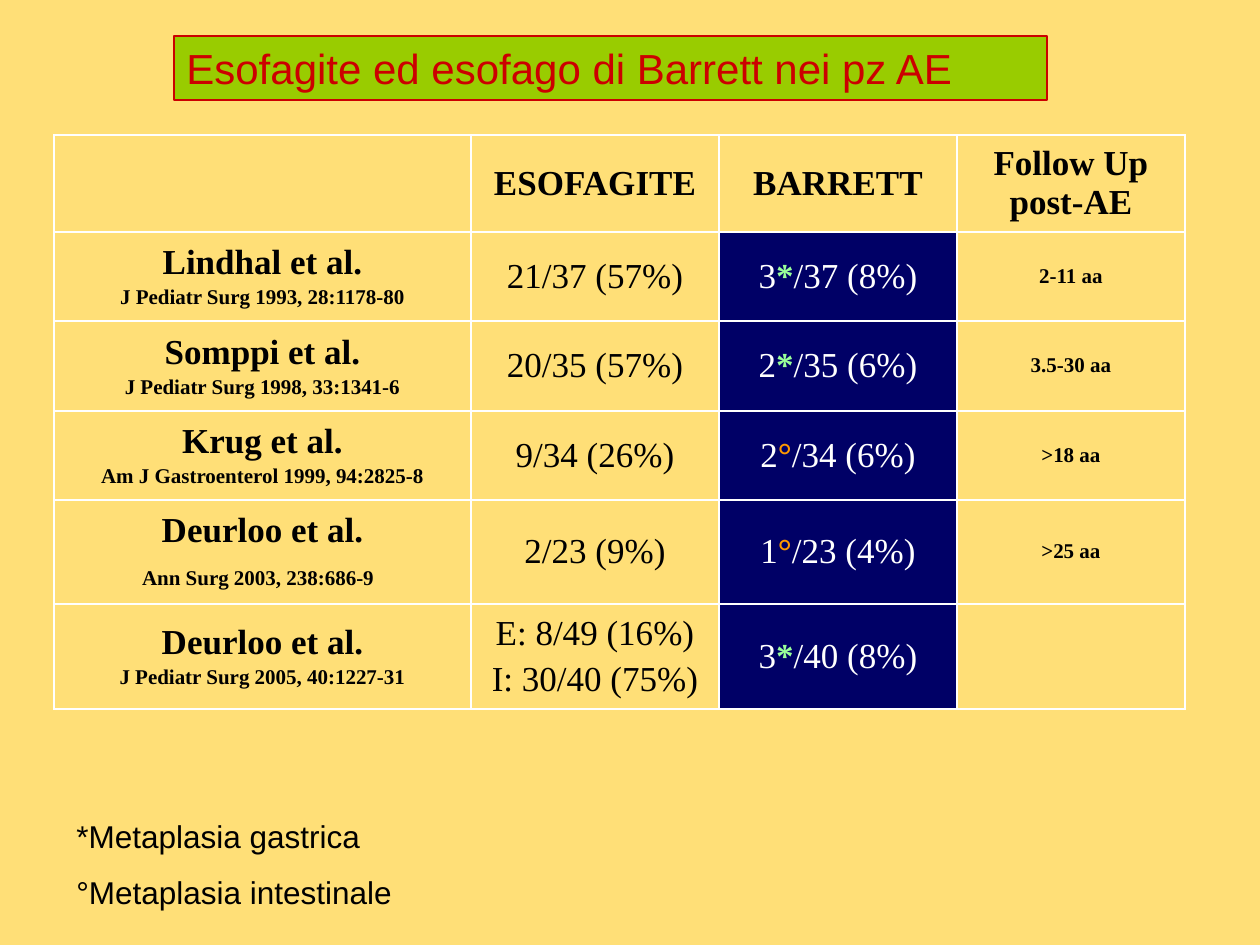
from lxml import etree
from pptx import Presentation, util as u
from pptx.dml.color import RGBColor
from pptx.enum import shapes, text
from pptx.oxml import ns

PX = 914400 / 126
COLORS = {
    "background": "FFDF77",
    "banner": "99CC00",
    "red": "CC0000",
    "black": "000000",
    "white": "FFFFFF",
    "navy": "000066",
    "*": "99FF99",
    "°": "FF9900",
}
STYLES = {
    "title": ({"size": u.Pt(24), "name": "Arial"}, "red"),
    "note": ({"size": u.Pt(18), "name": "Arial"}, "black"),
    "heading": ({"size": u.Pt(20), "name": "Times New Roman", "bold": True}, "black"),
    "small": ({"size": u.Pt(12), "name": "Times New Roman", "bold": True}, "black"),
    "value": ({"size": u.Pt(20), "name": "Times New Roman", "bold": False}, "black"),
    "barrett": ({"size": u.Pt(20), "name": "Times New Roman", "bold": False}, "white"),
    "*": ({"size": u.Pt(20), "name": "Times New Roman", "bold": True}, "*"),
    "°": ({"size": u.Pt(20), "name": "Times New Roman", "bold": True}, "°"),
}
HEADERS = ["", "ESOFAGITE", "BARRETT", "Follow Up post-AE"]
STUDIES = [
    ("Lindhal et al.", "J Pediatr Surg 1993, 28:1178-80", ["21/37 (57%)"], "3*/37 (8%)", "2-11 aa"),
    ("Somppi et al.", "J Pediatr Surg 1998, 33:1341-6", ["20/35 (57%)"], "2*/35 (6%)", "3.5-30 aa"),
    ("Krug et al.", "Am J Gastroenterol 1999, 94:2825-8", ["9/34 (26%)"], "2°/34 (6%)", ">18 aa"),
    ("Deurloo et al.", "Ann Surg 2003, 238:686-9 ", ["2/23 (9%)"], "1°/23 (4%)", ">25 aa"),
    ("Deurloo et al.", "J Pediatr Surg 2005, 40:1227-31", ["E: 8/49 (16%)", "I: 30/40 (75%)"], "3*/40 (8%)", ""),
]
COLUMN_WIDTHS = [417, 248, 238, 228]
ROW_HEIGHTS = [97, 89, 90, 89, 104, 105]


def px(length):
    """Turn a length in px into EMU."""
    return u.Emu(round(length * PX))


def color(name):
    """Look up a named colour."""
    return RGBColor.from_string(COLORS[name])


def apply(target, values):
    """Set attributes from a dict of format values."""
    for name, value in values.items():
        setattr(target, name, value)


def write(frame, paragraphs, gap, alignment):
    """Fill a text frame with paragraphs of (text, style) runs."""
    for index, runs in enumerate(paragraphs):
        paragraph = frame.add_paragraph() if index else frame.paragraphs[0]
        paragraph.alignment = alignment
        if index:
            paragraph.space_before = u.Pt(round(STYLES[runs[0][1]][0]["size"].pt * gap))
        for content, style in runs:
            run = paragraph.add_run()
            run.text = content
            values, tone = STYLES[style]
            apply(run.font, values)
            run.font.color.rgb = color(tone)


def add_title(slide, left, top, width, height):
    """Place the title banner in its box."""
    shape = slide.shapes.add_shape(
        shapes.MSO_SHAPE.RECTANGLE, px(left), px(top), px(width), px(height))
    shape.shadow.inherit = False
    shape.fill.solid()
    shape.fill.fore_color.rgb = color("banner")
    shape.line.color.rgb = color("red")
    shape.line.width = u.Pt(0.75)
    apply(shape.text_frame, {"word_wrap": True, "vertical_anchor": text.MSO_ANCHOR.MIDDLE})
    write(shape.text_frame, [[("Esofagite ed esofago di Barrett nei pz AE", "title")]],
          0.5, text.PP_ALIGN.LEFT)


def add_borders(cell):
    """Draw a thin white line on each side of a cell."""
    properties = cell._tc.get_or_add_tcPr()
    for index, side in enumerate(("lnL", "lnR", "lnT", "lnB")):
        line = etree.Element(ns.qn(f"a:{side}"), w=str(u.Pt(1)))
        fill = etree.SubElement(line, ns.qn("a:solidFill"))
        etree.SubElement(fill, ns.qn("a:srgbClr"), val=COLORS["white"])
        properties.insert(index, line)


def study_cells(author, journal, esophagitis, barrett, follow_up):
    """Turn one study into the paragraphs of its four cells."""
    reference = [(journal.rstrip(), "small")]
    if journal.endswith(" "):
        reference.append((" ", "value"))
    count, mark, share = barrett[0], barrett[1], barrett[2:]
    return [
        [[(author, "heading")], reference],
        [[(line, "value")] for line in esophagitis],
        [[(count, "barrett"), (mark, mark), (share, "barrett")]],
        [[(follow_up, "small")]] if follow_up else [],
    ]


def add_studies(slide, left, top):
    """Place the table of studies from its top left corner."""
    rows = [[[[(header, "heading")]] if header else [] for header in HEADERS]]
    rows += [study_cells(*study) for study in STUDIES]
    table = slide.shapes.add_table(
        len(rows), len(HEADERS), px(left), px(top),
        px(sum(COLUMN_WIDTHS)), px(sum(ROW_HEIGHTS))).table
    apply(table, {"first_row": False, "horz_banding": False})
    for column, width in zip(table.columns, COLUMN_WIDTHS):
        column.width = px(width)
    for row, height in zip(table.rows, ROW_HEIGHTS):
        row.height = px(height)
    for row_index, row in enumerate(rows):
        for column_index, paragraphs in enumerate(row):
            cell = table.cell(row_index, column_index)
            cell.vertical_anchor = text.MSO_ANCHOR.MIDDLE
            if row_index and HEADERS[column_index] == "BARRETT":
                cell.fill.solid()
                cell.fill.fore_color.rgb = color("navy")
            else:
                cell.fill.background()
            add_borders(cell)
            write(cell.text_frame, paragraphs, 0.2, text.PP_ALIGN.CENTER)


def add_notes(slide, left, top, width, height):
    """Place the key to the marks in its box."""
    box = slide.shapes.add_textbox(px(left), px(top), px(width), px(height))
    box.text_frame.word_wrap = True
    lines = ["*Metaplasia gastrica", "°Metaplasia intestinale"]
    write(box.text_frame, [[(line, "note")] for line in lines], 0.55, text.PP_ALIGN.LEFT)


def main():
    """Build the slide and save it."""
    presentation = Presentation()
    apply(presentation, {"slide_width": px(1260), "slide_height": px(945)})
    slide = presentation.slides.add_slide(presentation.slide_layouts[6])
    slide.background.fill.solid()
    slide.background.fill.fore_color.rgb = color("background")
    add_title(slide, 174, 36, 873, 64)
    add_studies(slide, 54, 135)
    add_notes(slide, 64, 811, 1121, 107)
    presentation.save("out.pptx")


if __name__ == "__main__":
    main()
